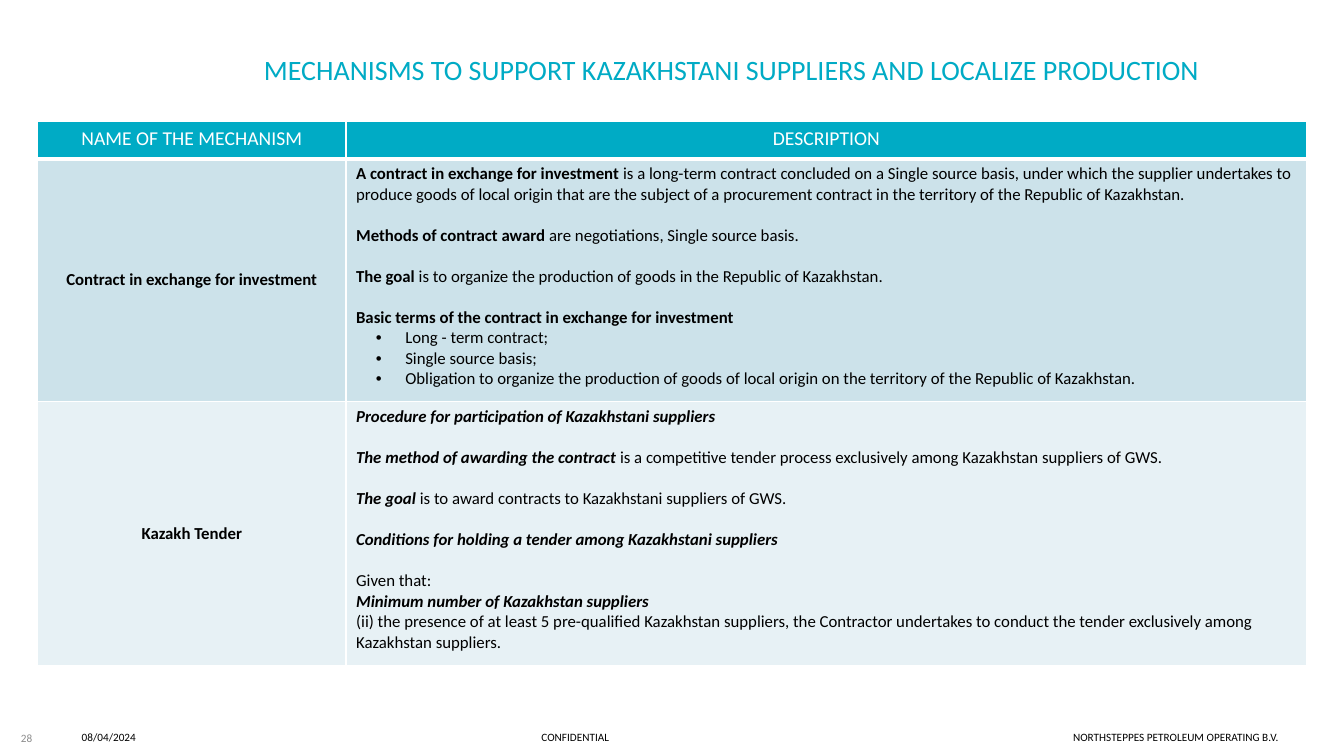
"""Builds the slide on mechanisms that support Kazakhstani suppliers."""
import pptx
import pptx.dml.color
import pptx.enum.text
import pptx.oxml
import pptx.oxml.ns
import pptx.util

Cm = pptx.util.Cm
Pt = pptx.util.Pt
ALIGN = pptx.enum.text.PP_ALIGN
ANCHOR = pptx.enum.text.MSO_ANCHOR
COLOURS = {"teal": "00ABC5", "white": "FFFFFF", "black": "000000", "grey": "8C8C8C",
           "contract": "CCE2EA", "tender": "E7F1F5"}
PLAIN = {"bold": False, "italic": False}
BOLD = {"bold": True, "italic": False}
STRONG = {"bold": True, "italic": True}


def add_span(para, text, size, colour, style=PLAIN):
    span = para.add_run()
    span.text = text
    for name, value in {"name": "Calibri", "size": Pt(size), **style}.items():
        setattr(span.font, name, value)
    span.font.color.rgb = pptx.dml.color.RGBColor.from_string(COLOURS[colour])


def style_cell(cell, fill, anchor, bottom_width=1):
    properties = cell._tc.get_or_add_tcPr()
    for side in "LRTB":
        width = Pt(bottom_width if side == "B" else 1)
        properties.append(pptx.oxml.parse_xml(
            f'<a:ln{side} {pptx.oxml.ns.nsdecls("a")} w="{width}"><a:solidFill>'
            f'<a:srgbClr val="{COLOURS["white"]}"/></a:solidFill></a:ln{side}>'))
    cell.fill.solid()
    cell.fill.fore_color.rgb = pptx.dml.color.RGBColor.from_string(COLOURS[fill])
    cell.vertical_anchor = anchor


deck = pptx.Presentation()
deck.slide_width, deck.slide_height = Cm(33.87), Cm(19.05)
page = deck.slides.add_slide(deck.slide_layouts[6])

labels = [
    ("28", 0.28, 18.14, 1, 0.91, 8, "grey", ALIGN.LEFT),
    ("MECHANISMS TO SUPPORT KAZAKHSTANI SUPPLIERS AND LOCALIZE PRODUCTION",
     3.2, 1.19, 30.48, 1.12, 20, "teal", ALIGN.CENTER),
    ("08/04/2024", 1.81, 18.2, 4, 0.76, 8, "black", ALIGN.LEFT),
    ("CONFIDENTIAL", 11.5, 18.2, 6, 0.76, 8, "black", ALIGN.CENTER),
    ("NORTHSTEPPES PETROLEUM OPERATING B.V.", 22.5, 18.2, 9.98, 0.76, 8, "black", ALIGN.RIGHT),
]
for text, left, top, width, height, size, colour, alignment in labels:
    box = page.shapes.add_textbox(Cm(left), Cm(top), Cm(width), Cm(height))
    box.text_frame.word_wrap = True
    box.text_frame.vertical_anchor = ANCHOR.MIDDLE
    para = box.text_frame.paragraphs[0]
    para.alignment = alignment
    add_span(para, text, size, colour)

mechanisms = [
    ("Contract in exchange for investment", "contract", [
        ("first", [("A contract in exchange for investment ", BOLD),
                   ("is a long-term contract concluded on a Single source basis, under which the "
                    "supplier undertakes to produce goods of local origin that are the subject of a "
                    "procurement contract in the territory of the Republic of Kazakhstan.", PLAIN)]),
        ("gap", [("Methods of contract award ", BOLD),
                 ("are negotiations, Single source basis.", PLAIN)]),
        ("gap", [("The goal ", BOLD),
                 ("is to organize the production of goods in the Republic of Kazakhstan.", PLAIN)]),
        ("gap", [("Basic terms of the contract in exchange for investment", BOLD)]),
        ("bullet", [("Long - term contract;", PLAIN)]),
        ("bullet", [("Single source basis;", PLAIN)]),
        ("bullet", [("Obligation to organize the production of goods of local origin on the "
                     "territory of the Republic of Kazakhstan.", PLAIN)]),
    ]),
    ("Kazakh Tender", "tender", [
        ("first", [("Procedure for participation of Kazakhstani suppliers", STRONG)]),
        ("gap", [("The method of awarding the contract ", STRONG),
                 ("is a competitive tender process exclusively among Kazakhstan suppliers of GWS.",
                  PLAIN)]),
        ("gap", [("The goal ", STRONG),
                 ("is to award contracts to Kazakhstani suppliers of GWS.", PLAIN)]),
        ("gap", [("Conditions for holding a tender among Kazakhstani suppliers", STRONG)]),
        ("gap", [("Given that:", PLAIN)]),
        ("next", [("Minimum number of Kazakhstan suppliers", STRONG)]),
        ("next", [("(ii) the presence of at least 5 pre-qualified Kazakhstan suppliers, the "
                   "Contractor undertakes to conduct the tender exclusively among Kazakhstan "
                   "suppliers.", PLAIN)]),
    ]),
]
column_widths = [7.77, 24.21]
row_heights = [0.94, 6.12, 6.65]
table = page.shapes.add_table(3, 2, Cm(0.95), Cm(3.06), Cm(sum(column_widths)),
                              Cm(sum(row_heights))).table
for column, width in zip(table.columns, column_widths):
    column.width = Cm(width)
for row, height in zip(table.rows, row_heights):
    row.height = Cm(height)

for column, heading in enumerate(["NAME OF THE MECHANISM", "DESCRIPTION"]):
    cell = table.cell(0, column)
    style_cell(cell, "teal", ANCHOR.TOP, bottom_width=3)
    para = cell.text_frame.paragraphs[0]
    para.alignment = ALIGN.CENTER
    add_span(para, heading, 14, "white")

for row, (mechanism, fill, description) in enumerate(mechanisms, start=1):
    name_cell, description_cell = table.cell(row, 0), table.cell(row, 1)
    style_cell(name_cell, fill, ANCHOR.MIDDLE)
    style_cell(description_cell, fill, ANCHOR.TOP)
    para = name_cell.text_frame.paragraphs[0]
    para.alignment = ALIGN.CENTER
    add_span(para, mechanism, 12, "black", BOLD)
    for kind, spans in description:
        frame = description_cell.text_frame
        para = frame.paragraphs[0] if kind == "first" else frame.add_paragraph()
        if kind == "gap":
            para.space_before = Pt(14.65)
        if kind == "bullet":
            properties = para._p.get_or_add_pPr()
            properties.set("marL", str(Cm(1.24)))
            properties.set("indent", str(-Cm(0.74)))
            for mark in ('buFont typeface="Arial"', 'buChar char="•"'):
                properties.append(pptx.oxml.parse_xml(
                    f'<a:{mark} {pptx.oxml.ns.nsdecls("a")}/>'))
        for text, style in spans:
            add_span(para, text, 12, "black", style)

deck.save("out.pptx")
